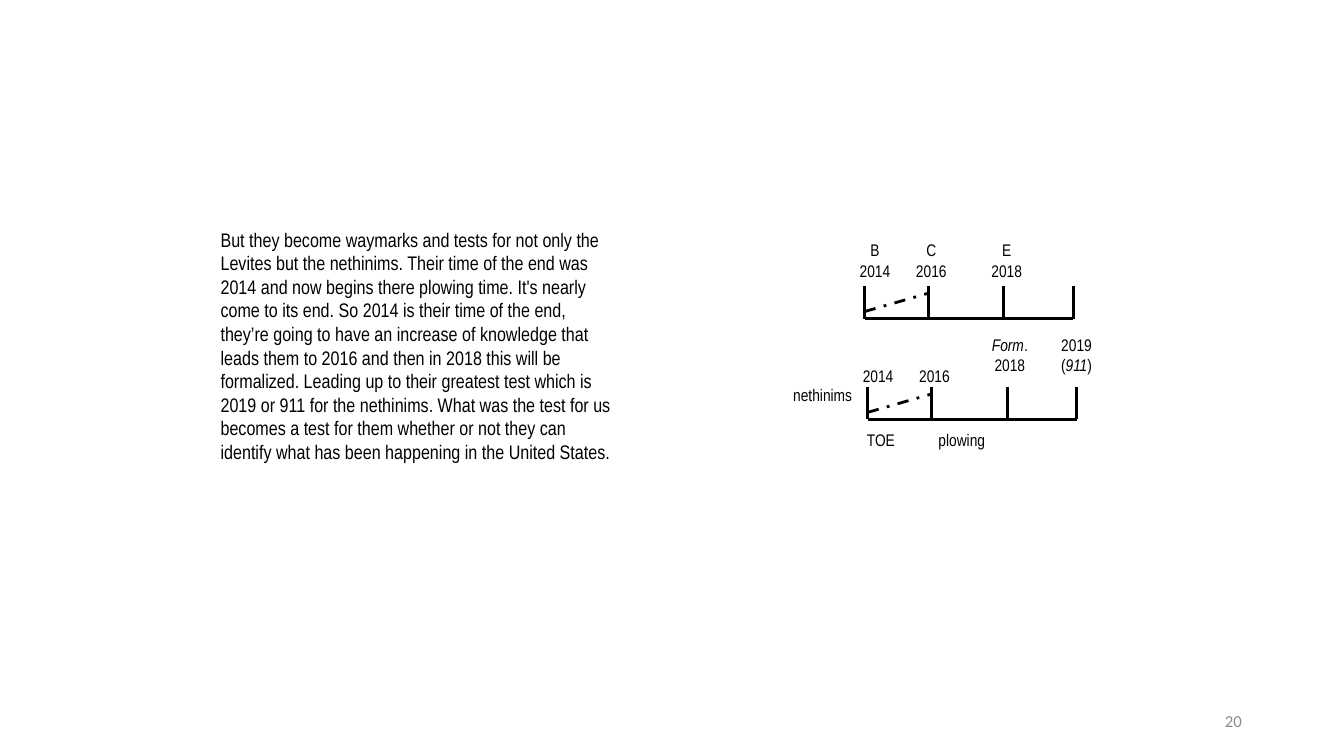
from lxml import etree
from pptx import Presentation
from pptx import util as u
from pptx.dml.color import RGBColor
from pptx.enum import dml, shapes, text
from pptx.oxml.ns import qn

PASSAGE = (
    "But they become waymarks and tests for not only the Levites but the nethinims. "
    "Their time of the end was 2014 and now begins there plowing time. It's nearly "
    "come to its end. So 2014 is their time of the end, they’re going to have an "
    "increase of knowledge that leads them to 2016 and then in 2018 this will be "
    "formalized. Leading up to their greatest test which is 2019 or 911 for the "
    "nethinims. What was the test for us becomes a test for them whether or not they "
    "can identify what has been happening in the United States."
)
# Horizontal distances from the start of a timeline, in cm
WAYMARKS = [0, 1.6, 3.51, 5.26]
LABEL_LEFTS = [-0.3, 1.12, 3.02, 4.7]
LABEL_WIDTH = 1.12
TICK = 0.81


def rgb(value):
    return RGBColor.from_string(value)


class Board:
    font = "Arial Narrow"
    ink = "000000"
    stroke = 2

    def __init__(self, slide):
        self.slide = slide

    def add_words(self, words, left, top, width, height, size=12, font=None, color=None,
                  align=text.PP_ALIGN.LEFT, anchor=text.MSO_ANCHOR.TOP, inset=0.1):
        """Add text; line breaks start paragraphs and *stars* enclose italics."""
        box = self.slide.shapes.add_textbox(u.Cm(left), u.Cm(top), u.Cm(width), u.Cm(height))
        frame = box.text_frame
        frame.word_wrap = True
        frame.vertical_anchor = anchor
        frame.margin_left = frame.margin_right = u.Cm(inset)
        frame.margin_top = frame.margin_bottom = u.Cm(min(inset, 0.13))
        for number, line in enumerate(words.split("\n")):
            paragraph = frame.add_paragraph() if number else frame.paragraphs[0]
            paragraph.alignment = align
            for position, part in enumerate(line.split("*")):
                if part:
                    run = paragraph.add_run()
                    run.text = part
                    run.font.size = u.Pt(size)
                    run.font.name = font or self.font
                    run.font.color.rgb = rgb(color or self.ink)
                    run.font.italic = position % 2 == 1

    def label(self, words, left, top, height):
        self.add_words(words, left, top, LABEL_WIDTH, height, align=text.PP_ALIGN.CENTER)

    def line(self, x1, y1, x2, y2, dash=None):
        connector = self.slide.shapes.add_connector(
            shapes.MSO_CONNECTOR.STRAIGHT, u.Cm(x1), u.Cm(y1), u.Cm(x2), u.Cm(y2))
        connector.line.color.rgb = rgb(self.ink)
        connector.line.width = u.Pt(self.stroke)
        if dash:
            connector.line.dash_style = dash
        etree.SubElement(connector._element.spPr, qn("a:effectLst"))

    def timeline(self, start, base, labels):
        """Draw a base line with ticks; labels are (words, rise above base, height)."""
        self.line(start, base, start + WAYMARKS[-1], base)
        for offset in WAYMARKS:
            self.line(start + offset, base - TICK, start + offset, base)
        self.line(start, base - 0.18, start + WAYMARKS[1], base - 0.64,
                  dash=dml.MSO_LINE.DASH_DOT)
        for offset, (words, rise, height) in zip(LABEL_LEFTS, labels):
            self.label(words, start + offset, base - rise, height)


def main():
    deck = Presentation()
    deck.slide_width, deck.slide_height = u.Cm(33.87), u.Cm(19.05)
    board = Board(deck.slides.add_slide(deck.slide_layouts[6]))

    board.add_words("20", 23.93, 17.65, 7.62, 1.02, font="Calibri", color="8C8C8C",
                    align=text.PP_ALIGN.RIGHT, anchor=text.MSO_ANCHOR.MIDDLE, inset=0.25)
    board.add_words(PASSAGE, 5.31, 5.61, 10.36, 7.01, size=14, inset=0.25)

    board.timeline(21.79, 8.03, [
        ("B\n2014", 2.08, 1.24), ("C\n2016", 2.08, 1.24), ("E\n2018", 2.08, 1.24)])
    board.timeline(21.87, 10.57, [
        ("2014", 1.45, 0.61), ("2016", 1.45, 0.61),
        ("*Form*.\n2018", 2.24, 1.4), ("2019\n(*911*)", 2.24, 1.4)])

    board.add_words("nethinims", 19.89, 9.6, 1.9, 0.66)
    board.add_words("plowing", 23.55, 10.72, 1.9, 0.66)
    board.label("TOE", 21.64, 10.72, 0.61)

    deck.save("out.pptx")


if __name__ == "__main__":
    main()
